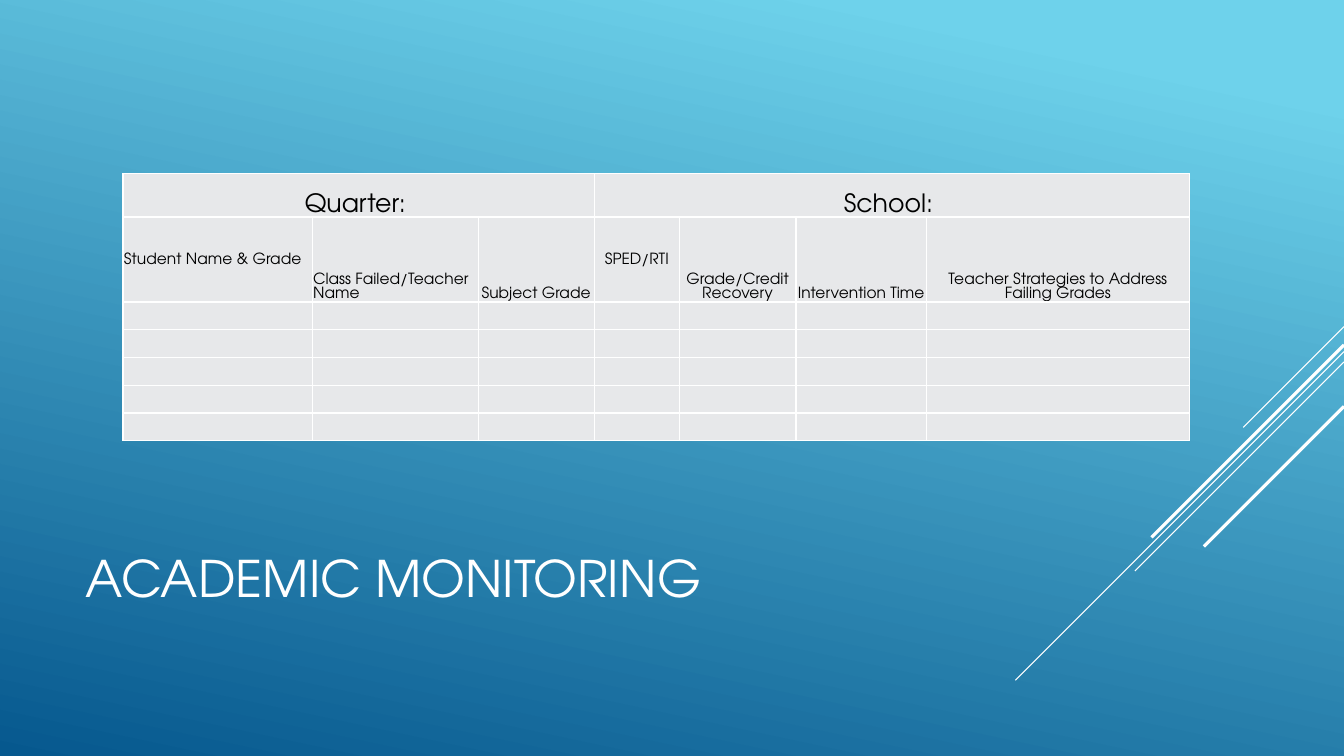
from lxml import etree
from pptx import Presentation
from pptx.dml.color import RGBColor
from pptx.enum.shapes import MSO_CONNECTOR
from pptx.enum.text import MSO_ANCHOR, MSO_AUTO_SIZE, PP_ALIGN
from pptx.oxml.ns import qn
from pptx.util import Cm, Pt

WHITE = RGBColor(0xFF, 0xFF, 0xFF)
BLACK = RGBColor(0x00, 0x00, 0x00)
GREY = RGBColor(0xE7, 0xE8, 0xEA)
SKY = RGBColor(0x6E, 0xD2, 0xEB)
NAVY = RGBColor(0x06, 0x58, 0x8E)
FONT = "TeX Gyre Adventor"
LEFT, CENTER = PP_ALIGN.LEFT, PP_ALIGN.CENTER
MIDDLE, BOTTOM = MSO_ANCHOR.MIDDLE, MSO_ANCHOR.BOTTOM
STRAIGHT = MSO_CONNECTOR.STRAIGHT
NO_FIT = MSO_AUTO_SIZE.NONE

WIDTH, HEIGHT = Cm(33.87), Cm(19.05)
COLUMN_WIDTHS = [4.77, 4.18, 2.93, 2.14, 2.94, 3.29, 6.63]
ROW_HEIGHTS = [1.09, 2.14] + [0.7] * 5
BANNERS = [("Quarter: ", 0, 2), ("School: ", 3, 6)]
HEADINGS = [
    ("Student Name & Grade", LEFT, MIDDLE),
    ("Class Failed/Teacher Name", LEFT, BOTTOM),
    ("Subject Grade", CENTER, BOTTOM),
    ("SPED/RTI", CENTER, MIDDLE),
    ("Grade/Credit Recovery", CENTER, BOTTOM),
    ("Intervention Time", CENTER, BOTTOM),
    ("Teacher Strategies to Address Failing Grades", CENTER, BOTTOM),
]
RAYS = [(8.23, 2.54, 0.75), (8.86, 8.28, 0.75), (9.12, 5.27, 0.75),
        (8.69, 4.85, 2.25), (10.24, 3.53, 2.25)]


def add_run(p, text, size, color):
    """Add one formatted run to a paragraph."""
    r = p.add_run()
    r.text = text
    r.font.name = FONT
    r.font.size = Pt(size)
    r.font.color.rgb = color


def paint_background(s):
    """Fill the slide with the blue gradient."""
    fill = s.background.fill
    fill.gradient()
    fill.gradient_angle = 258
    for stop, color, position in zip(fill.gradient_stops, (SKY, NAVY), (0.1, 1)):
        stop.color.rgb = color
        stop.position = position


def add_rays(s, right):
    """Draw the diagonal lines that run down and left from the right edge."""
    for top, reach, weight in RAYS:
        ray = s.shapes.add_connector(STRAIGHT, right, Cm(top),
                                     right - Cm(reach), Cm(top + reach))
        ray.line.color.rgb = WHITE
        ray.line.width = Pt(weight)
        etree.SubElement(ray._element.spPr, qn("a:effectLst"))


def add_title(s, left, top, width, height):
    """Place and format the title placeholder."""
    title = s.shapes.title
    title.left, title.top, title.width, title.height = left, top, width, height
    tf = title.text_frame
    tf.word_wrap = True
    tf.auto_size = NO_FIT
    tf.vertical_anchor = MIDDLE
    p = tf.paragraphs[0]
    p.alignment = LEFT
    add_run(p, "ACADEMIC MONITORING", 36, WHITE)


def style_cell(cell):
    """Give a cell its fill, tight margins, white borders and base text size."""
    cell.margin_left = cell.margin_right = cell.margin_top = Cm(0.02)
    cell.margin_bottom = 0
    tcPr = cell._tc.get_or_add_tcPr()
    for side in ("lnL", "lnR", "lnT", "lnB"):
        ln = etree.SubElement(tcPr, qn(f"a:{side}"), w=str(Pt(1)))
        solid = etree.SubElement(ln, qn("a:solidFill"))
        etree.SubElement(solid, qn("a:srgbClr"), val=str(WHITE))
    cell.fill.solid()
    cell.fill.fore_color.rgb = GREY
    p = cell.text_frame.paragraphs[0]
    etree.SubElement(p._p, qn("a:endParaRPr"), sz="1100")


def write_cell(cell, text, size, alignment, anchor):
    """Write one paragraph of black text into a cell."""
    cell.vertical_anchor = anchor
    p = cell.text_frame.paragraphs[0]
    p.alignment = alignment
    add_run(p, text, size, BLACK)


def add_monitoring_table(s, left, top, width, height):
    """Build the monitoring form with its two banners and seven columns."""
    frame = s.shapes.add_table(len(ROW_HEIGHTS), len(COLUMN_WIDTHS),
                               left, top, width, height)
    table = frame.table
    table.first_row = table.horz_banding = False
    for column, size in zip(table.columns, COLUMN_WIDTHS):
        column.width = Cm(size)
    for row, size in zip(table.rows, ROW_HEIGHTS):
        row.height = Cm(size)
    for cell in table.iter_cells():
        style_cell(cell)
    for text, first, last in BANNERS:
        table.cell(0, first).merge(table.cell(0, last))
        write_cell(table.cell(0, first), text, 18, CENTER, BOTTOM)
    for i, (text, alignment, anchor) in enumerate(HEADINGS):
        write_cell(table.cell(1, i), text, 11, alignment, anchor)


def main():
    """Build and save the slide."""
    prs = Presentation()
    prs.slide_width, prs.slide_height = WIDTH, HEIGHT
    s = prs.slides.add_slide(prs.slide_layouts[5])
    paint_background(s)
    add_rays(s, WIDTH)
    add_title(s, Cm(1.9), Cm(12.45), Cm(23.7), Cm(4.19))
    add_monitoring_table(s, Cm(3.1), Cm(4.38), Cm(26.88), Cm(6.73))
    prs.save("out.pptx")


if __name__ == "__main__":
    main()
